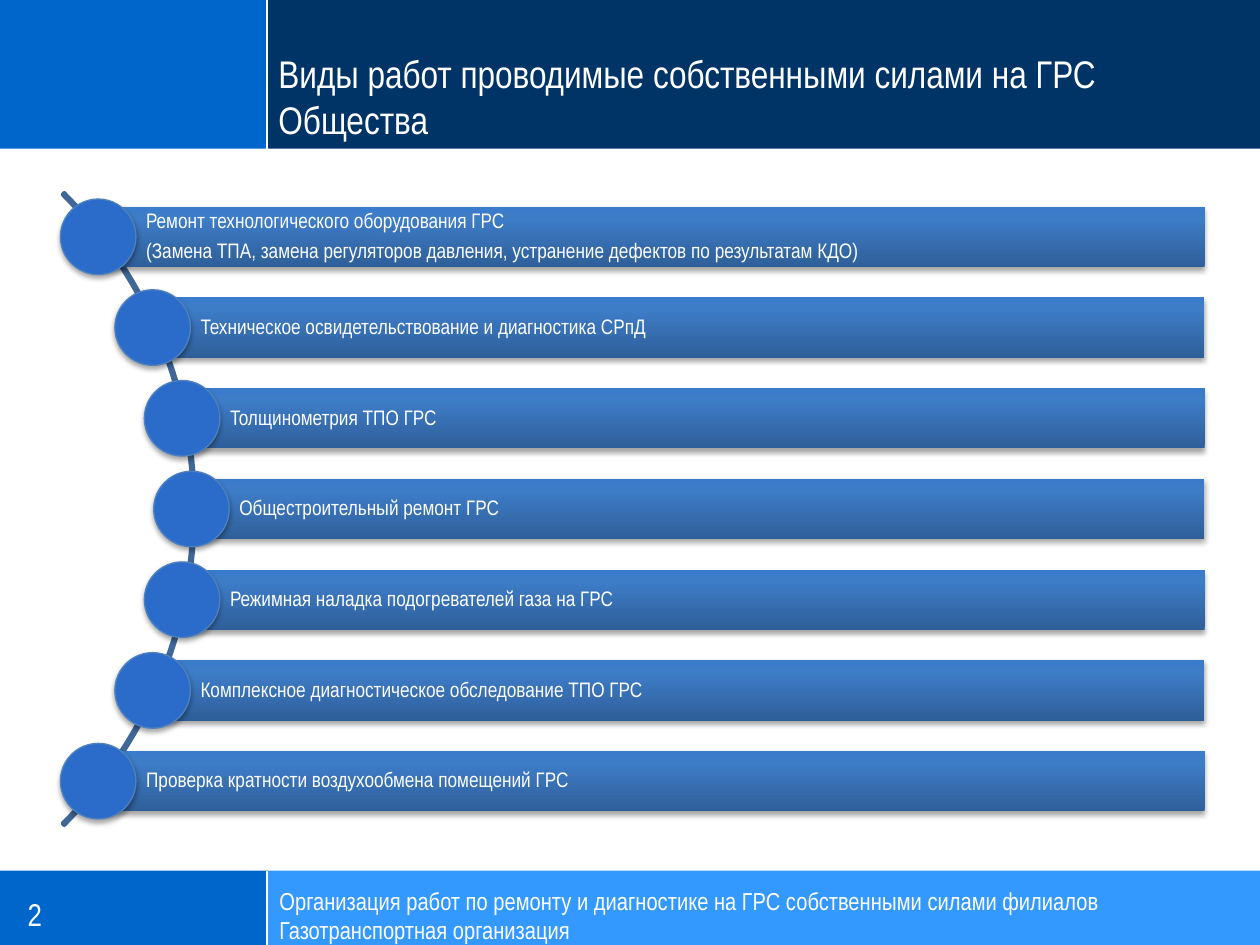
from math import sqrt

from lxml import etree
from pptx import Presentation
from pptx.dml.color import RGBColor
from pptx.enum.shapes import MSO_CONNECTOR, MSO_SHAPE
from pptx.enum.text import MSO_ANCHOR, MSO_AUTO_SIZE, PP_ALIGN
from pptx.oxml.ns import qn
from pptx.util import Inches, Pt

RECTANGLE = MSO_SHAPE.RECTANGLE
OVAL = MSO_SHAPE.OVAL
BLOCK_ARC = MSO_SHAPE.BLOCK_ARC
STRAIGHT = MSO_CONNECTOR.STRAIGHT
MIDDLE, BOTTOM, TOP = MSO_ANCHOR.MIDDLE, MSO_ANCHOR.BOTTOM, MSO_ANCHOR.TOP
LEFT = PP_ALIGN.LEFT
NO_AUTOFIT, GROW = MSO_AUTO_SIZE.NONE, MSO_AUTO_SIZE.SHAPE_TO_FIT_TEXT

FONT = "Arial Narrow"
WHITE = "FFFFFF"
BAR_GRADIENT = [(0, "2F5F99"), (80, "3D7CC7"), (100, "3A7CCB")]

WIDTH, HEIGHT = 10, 7.5
SPLIT = 2.12
HEADER_HEIGHT = 1.18
FOOTER_TOP = 6.91

ARC_X, ARC_Y = -2, 4.04
ARC_RADIUS = 3.55
DOT_TRACK_RADIUS = 3.52
DOT_SIZE = 0.6
BAR_RIGHT, BAR_HEIGHT, BAR_STEP = 9.56, 0.48, 0.72

TITLE = "Виды работ проводимые собственными силами на ГРС Общества"
FOOTER = [
    "Организация работ по ремонту и диагностике на ГРС собственными силами филиалов",
    "Газотранспортная организация",
]
WORKS = [
    ["Ремонт технологического оборудования ГРС",
     "(Замена ТПА, замена регуляторов давления, устранение дефектов по результатам КДО)"],
    ["Техническое освидетельствование и диагностика СРпД"],
    ["Толщинометрия ТПО ГРС"],
    ["Общестроительный ремонт ГРС"],
    ["Режимная наладка подогревателей газа на ГРС"],
    ["Комплексное диагностическое обследование ТПО ГРС"],
    ["Проверка кратности воздухообмена помещений ГРС"],
]


def rgb(color):
    return RGBColor.from_string(color)


def set_attributes(target, values):
    for name, value in values.items():
        setattr(target, name, value)


def write_text(frame, lines, size, insets, anchor=TOP, autofit=NO_AUTOFIT, spacing=None):
    """Fill a text frame; insets are left, top, right, bottom in inches."""
    left, top, right, bottom = map(Inches, insets)
    set_attributes(frame, {
        "word_wrap": True, "auto_size": autofit, "vertical_anchor": anchor,
        "margin_left": left, "margin_top": top,
        "margin_right": right, "margin_bottom": bottom,
    })
    for index, line in enumerate(lines):
        paragraph = frame.paragraphs[0] if index == 0 else frame.add_paragraph()
        set_attributes(paragraph, {"text": line, "alignment": LEFT, **(spacing or {})})
        set_attributes(paragraph.font, {"name": FONT, "size": Pt(size)})
        paragraph.font.color.rgb = rgb(WHITE)


def add_shape(slide, kind, box, fill=None, line=None, line_width=0.75):
    shape = slide.shapes.add_shape(kind, *map(Inches, box))
    shape.shadow.inherit = False
    if fill:
        shape.fill.solid()
        shape.fill.fore_color.rgb = rgb(fill)
    else:
        shape.fill.background()
    if line:
        shape.line.color.rgb = rgb(line)
        shape.line.width = Pt(line_width)
    else:
        shape.line.fill.background()
    return shape


def add_color(parent, color):
    return etree.SubElement(parent, qn("a:srgbClr"), val=color)


def add_soft_shadow(shape):
    effects = shape._element.spPr.find(qn("a:effectLst"))
    shadow = etree.SubElement(effects, qn("a:outerShdw"), blurRad=str(Pt(3.1)),
                              dist=str(Pt(1.8)), dir="5400000", rotWithShape="0")
    etree.SubElement(add_color(shadow, "000000"), qn("a:alpha"), val="35000")


def set_gradient(shape, stops):
    """Run the stops (percent, color) from the bottom edge to the top."""
    shape.fill.gradient()
    shape.fill.gradient_angle = 90
    stop_list = next(shape._element.spPr.iter(qn("a:gsLst")))
    for old_stop in list(stop_list):
        stop_list.remove(old_stop)
    for percent, color in stops:
        add_color(etree.SubElement(stop_list, qn("a:gs"), pos=str(percent * 1000)), color)


def add_band(slide, top, height, left_color, right_color):
    """Draw a two-coloured band with a white divider."""
    add_shape(slide, RECTANGLE, (0, top, SPLIT, height), left_color)
    add_shape(slide, RECTANGLE, (SPLIT, top, WIDTH - SPLIT, height), right_color)
    divider = slide.shapes.add_connector(
        STRAIGHT, *map(Inches, (SPLIT, top, SPLIT, top + height)))
    divider.line.color.rgb = rgb(WHITE)
    divider.line.width = Pt(1.25)
    etree.SubElement(divider._element.spPr, qn("a:effectLst"))


def place_title(slide):
    title = slide.shapes.title
    set_attributes(title, {"left": Inches(2.11), "top": 0,
                           "width": Inches(7.89), "height": Inches(HEADER_HEIGHT)})
    write_text(title.text_frame, [TITLE], 22, (0.1, 0.05, 0.1, 0.05), BOTTOM)
    slide.shapes._spTree.append(title._element)  # bring in front of the header band


def add_label(slide, box, lines, size, insets):
    label = slide.shapes.add_textbox(*map(Inches, box))
    write_text(label.text_frame, lines, size, insets, autofit=GROW)


def add_arc(slide):
    diameter = 2 * ARC_RADIUS
    arc = add_shape(slide, BLOCK_ARC,
                    (ARC_X - ARC_RADIUS, ARC_Y - ARC_RADIUS, diameter, diameter),
                    line="3F6797", line_width=2)
    for index, value in enumerate((189, 27, 0.003)):  # 315° to 45°, thin ring
        arc.adjustments[index] = value


def add_work(slide, lines, offset):
    """Draw one bar and its dot; offset is the distance below the arc's middle."""
    dot_x = ARC_X + sqrt(DOT_TRACK_RADIUS ** 2 - offset ** 2)
    dot_y = ARC_Y + offset
    bar = add_shape(slide, RECTANGLE,
                    (dot_x, dot_y - BAR_HEIGHT / 2, BAR_RIGHT - dot_x, BAR_HEIGHT))
    set_gradient(bar, BAR_GRADIENT)
    write_text(bar.text_frame, lines, 12, (0.38, 0.03, 0.03, 0.03), MIDDLE,
               spacing={"line_spacing": 0.9, "space_after": Pt(4.2)})
    dot = add_shape(slide, OVAL,
                    (dot_x - DOT_SIZE / 2, dot_y - DOT_SIZE / 2, DOT_SIZE, DOT_SIZE),
                    "2B6CCB", "4F81BD")
    for shape in (bar, dot):
        add_soft_shadow(shape)


def main():
    presentation = Presentation()
    presentation.slide_width = Inches(WIDTH)
    presentation.slide_height = Inches(HEIGHT)
    slide = presentation.slides.add_slide(presentation.slide_layouts[5])

    add_band(slide, FOOTER_TOP, HEIGHT - FOOTER_TOP, "0066CC", "3399FF")
    add_band(slide, 0, HEADER_HEIGHT, "0066CC", "003366")
    add_label(slide, (0.12, 7.05, 2.12, 0.41), ["2"], 18, (0.1, 0.05, 0.1, 0.05))
    add_label(slide, (SPLIT, 7.03, 7.27, 0.47), FOOTER, 14, (0.1, 0, 0.1, 0))
    place_title(slide)

    add_arc(slide)
    middle = (len(WORKS) - 1) / 2
    for index, lines in enumerate(WORKS):
        add_work(slide, lines, (index - middle) * BAR_STEP)

    presentation.save("out.pptx")


if __name__ == "__main__":
    main()
